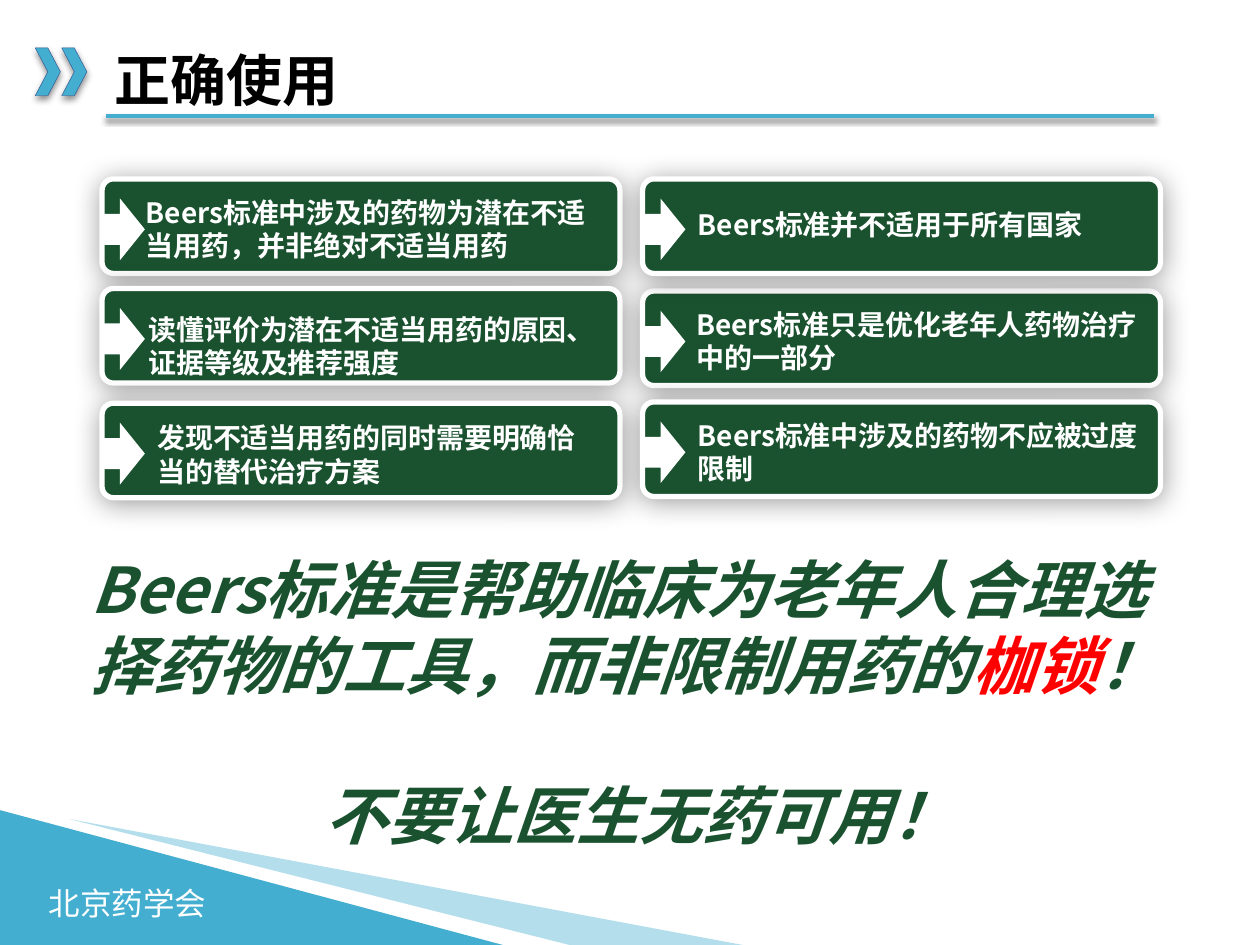
from dataclasses import dataclass

import lxml.etree
import pptx
import pptx.dml.color
import pptx.enum.shapes
import pptx.enum.text
import pptx.oxml.ns
import pptx.util

SHAPES = pptx.enum.shapes.MSO_SHAPE
ALIGN = pptx.enum.text.PP_ALIGN
FONT = "Noto Sans CJK SC"
GREEN, BLUE, WHITE = "1A522F", "44AED0", "FFFFFF"

deck = pptx.Presentation()
deck.slide_width = pptx.util.Inches(10)
deck.slide_height = pptx.util.Inches(7.5)
page = deck.slides.add_slide(deck.slide_layouts[6])
COLUMNS, ROWS = 100, 75


@dataclass(frozen=True)
class Area:
    """A rectangle in columns and rows of the page grid."""
    column: float
    row: float
    columns: float
    rows: float

    def lengths(self) -> tuple:
        return (across(self.column), down(self.row), across(self.columns), down(self.rows))


@dataclass(frozen=True)
class Shadow:
    color: str
    opacity: int
    blur: float
    distance: float


@dataclass(frozen=True)
class Card:
    """A statement card; the text offsets are measured from the card's corner."""
    column: float
    row: float
    text_right: float
    text_down: float
    text: str


def across(columns: float) -> int:
    return round(deck.slide_width * columns / COLUMNS)


def down(rows: float) -> int:
    return round(deck.slide_height * rows / ROWS)


def rgb(color: str):
    return pptx.dml.color.RGBColor.from_string(color)


def add_child(parent, tag: str, **attributes):
    child = lxml.etree.SubElement(parent, pptx.oxml.ns.qn(tag))
    for name, value in attributes.items():
        child.set(name, str(value))
    return child


def cast_shadow(properties, shadow: Shadow | None) -> None:
    """Write the effect list of a shape, empty when there is no shadow."""
    effects = add_child(properties, "a:effectLst")
    if shadow:
        outer = add_child(effects, "a:outerShdw", blurRad=pptx.util.Pt(shadow.blur),
                          dist=pptx.util.Pt(shadow.distance), dir=90 * 60000,
                          algn="t", rotWithShape=0)
        tint = add_child(outer, "a:srgbClr", val=shadow.color)
        add_child(tint, "a:alpha", val=shadow.opacity * 1000)


def paint(shape, fill: str, line: str = "", width: float = 0,
          shadow: Shadow | None = None) -> None:
    shape.fill.solid()
    shape.fill.fore_color.rgb = rgb(fill)
    if line:
        shape.line.color.rgb = rgb(line)
        shape.line.width = pptx.util.Pt(width)
    else:
        shape.line.fill.background()
    cast_shadow(shape._element.spPr, shadow)


def add_preset(kind, area: Area, fill: str, adjustments: tuple = (), **style):
    shape = page.shapes.add_shape(kind, *area.lengths())
    for index, value in enumerate(adjustments):
        shape.adjustments[index] = value
    paint(shape, fill, **style)
    return shape


def add_span(para, text: str, color: str, **format_values) -> None:
    span = para.add_run()
    span.text = text
    span.font.color.rgb = rgb(color)
    for name, value in {"name": FONT, **format_values}.items():
        setattr(span.font, name, value)
    add_child(span.font._element, "a:ea", typeface=FONT)


def add_text(area: Area, text: str, color: str, wrap: bool = True, **format_values):
    box = page.shapes.add_textbox(*area.lengths())
    box.text_frame.word_wrap = wrap
    add_span(box.text_frame.paragraphs[0], text, color, **format_values)
    return box


def add_card(card: Card) -> None:
    add_preset(SHAPES.ROUNDED_RECTANGLE, Area(card.column, card.row, 41.1, 7.5), GREEN,
               (0.12,), line=WHITE, width=3, shadow=Shadow("000000", 38, 16, 1.6))
    add_text(Area(card.column + card.text_right, card.row + card.text_down, 37.2, 6.4),
             card.text, WHITE, size=pptx.util.Pt(16), bold=True)
    add_preset(SHAPES.RIGHT_ARROW, Area(card.column, card.row + 1.55, 3.4, 4.9), WHITE,
               (0.5, 0.58))


def add_frame() -> None:
    rule = page.shapes.add_connector(pptx.enum.shapes.MSO_CONNECTOR.STRAIGHT,
                                     across(8.4), down(9.2), across(91.6), down(9.2))
    rule.line.color.rgb = rgb(BLUE)
    rule.line.width = pptx.util.Pt(2.25)
    cast_shadow(rule._element.spPr, Shadow("808080", 100, 3, 2))

    add_preset(SHAPES.ISOSCELES_TRIANGLE, Area(0, 64.3, 39.9, 10.7), BLUE, (0,))
    add_text(Area(2.9, 69.7, 14.6, 4), "北京药学会", WHITE, wrap=False,
             size=pptx.util.Pt(18))

    builder = page.shapes.build_freeform(across(5.5), down(65))
    builder.add_line_segments([(across(59.5), down(75.1)), (across(45.6), down(75.1))])
    ray = builder.convert_to_shape()
    paint(ray, BLUE)
    tint = ray._element.spPr.find(pptx.oxml.ns.qn("a:solidFill"))[0]
    add_child(tint, "a:alpha", val=40000)

    for column in (4.9, 2.8):
        add_preset(SHAPES.CHEVRON, Area(column, 3.8, 2, 3.8), BLUE, (0.5,),
                   line="325491", width=0.25, shadow=Shadow("000000", 46, 4, 2))


def add_conclusion() -> None:
    style = {"size": pptx.util.Pt(36), "bold": True, "italic": True}
    box = add_text(Area(6.2, 43.2, 89.1, 25.2),
                   "Beers标准是帮助临床为老年人合理选择药物的工具，而非限制用药的", GREEN, **style)
    first = box.text_frame.paragraphs[0]
    add_span(first, "枷锁", "FF0000", **style)
    add_span(first, "！", GREEN, **style)
    last = box.text_frame.add_paragraph()
    last.alignment = ALIGN.CENTER
    last.space_before = pptx.util.Pt(43)
    add_span(last, "不要让医生无药可用！", GREEN, **style)


LEFT, RIGHT = 8.1, 51
CARDS = [
    Card(LEFT, 14.2, 2.5, 0.8, "Beers标准中涉及的药物为潜在不适当用药，并非绝对不适当用药"),
    Card(LEFT, 22.9, 2.7, 1.4, "读懂评价为潜在不适当用药的原因、证据等级及推荐强度"),
    Card(LEFT, 32, 3.4, 0.9, "发现不适当用药的同时需要明确恰当的替代治疗方案"),
    Card(RIGHT, 23.1, 3.3, 0.8, "Beers标准只是优化老年人药物治疗中的一部分"),
    Card(RIGHT, 14.2, 3.4, 1.8, "Beers标准并不适用于所有国家"),
    Card(RIGHT, 31.9, 3.4, 0.8, "Beers标准中涉及的药物不应被过度限制"),
]

add_frame()
for card in CARDS:
    add_card(card)
add_conclusion()
add_text(Area(8.1, 3.1, 23.5, 6.4), "正确使用", "000000", size=pptx.util.Pt(32), bold=True)

deck.save("out.pptx")
